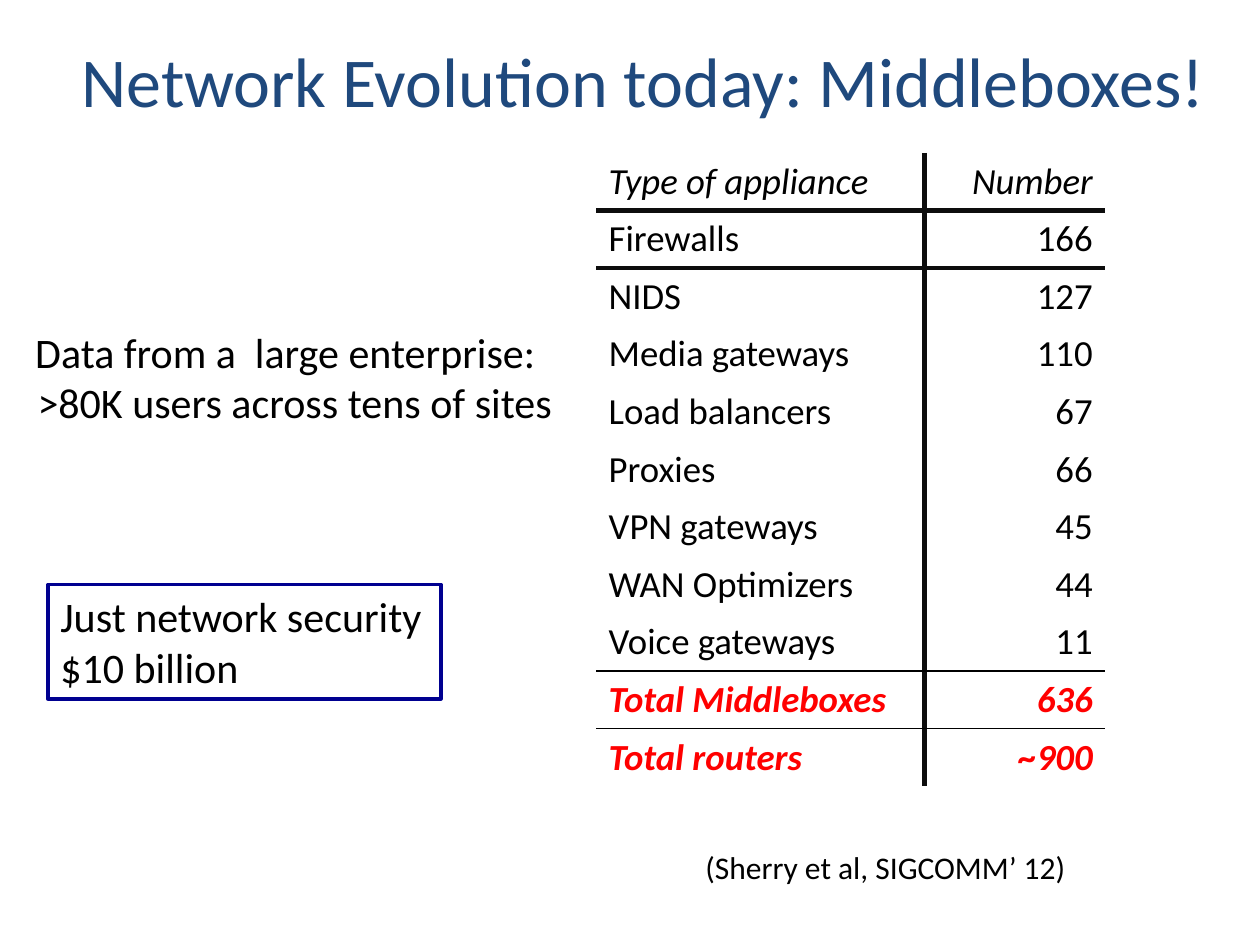
from dataclasses import dataclass

from lxml.etree import SubElement
from pptx import Presentation
from pptx.dml.color import RGBColor
from pptx.enum.shapes import MSO_SHAPE as Preset
from pptx.enum.text import MSO_ANCHOR as Anchor, MSO_AUTO_SIZE as AutoSize, PP_ALIGN as Align
from pptx.oxml import parse_xml
from pptx.oxml.ns import nsdecls, qn
from pptx.util import Pt


@dataclass(frozen=True)
class Theme:
    """Colours, font and type sizes of the slide."""
    font: str = "Calibri"
    title: str = "1F497D"
    text: str = "000000"
    total: str = "FF0000"
    rule: str = "0D0D0D"
    frame: str = "000090"
    paper: str = "FFFFFF"
    title_size: int = 40
    body_size: int = 24
    table_size: int = 21
    source_size: int = 18
    thick: int = 3
    thin: int = 1


THEME = Theme()
NO_STYLE = "{2D5ABB26-0587-4C30-8999-92F81FD0307C}"
APPLIANCES = [
    ("Type of appliance", "Number"),
    ("Firewalls", "166"),
    ("NIDS", "127"),
    ("Media gateways", "110"),
    ("Load balancers", "67"),
    ("Proxies", "66"),
    ("VPN gateways", "45"),
    ("WAN Optimizers", "44"),
    ("Voice gateways", "11"),
    ("Total Middleboxes", "636"),
    ("Total routers", "~900"),
]
RULES_BELOW = {
    0: (THEME.rule, THEME.thick),
    1: (THEME.rule, THEME.thick),
    8: (THEME.text, THEME.thin),
    9: (THEME.text, THEME.thin),
}


def points(*lengths):
    """Turn numbers into point lengths."""
    return [Pt(length) for length in lengths]


def write_lines(frame, lines, size, color=THEME.text, align=Align.LEFT, **font_format):
    """Write each line as one formatted paragraph."""
    for index, line in enumerate(lines):
        paragraph = frame.paragraphs[0] if index == 0 else frame.add_paragraph()
        paragraph.alignment = align
        run = paragraph.add_run()
        run.text = line
        run.font.color.rgb = RGBColor.from_string(color)
        for name, value in {"name": THEME.font, "size": Pt(size), **font_format}.items():
            setattr(run.font, name, value)


def set_title(slide, text, box):
    """Place and format the title placeholder."""
    title = slide.shapes.title
    for name, value in zip(("left", "top", "width", "height"), points(*box)):
        setattr(title, name, value)
    title.text_frame.auto_size = AutoSize.NONE
    title.text_frame.vertical_anchor = Anchor.MIDDLE
    write_lines(title.text_frame, [text], THEME.title_size, THEME.title, Align.CENTER)


def add_text(slide, lines, box, size, align=Align.LEFT, wrap=True):
    """Add a text box and return its text frame."""
    frame = slide.shapes.add_textbox(*points(*box)).text_frame
    frame.word_wrap = wrap
    frame.auto_size = AutoSize.SHAPE_TO_FIT_TEXT
    write_lines(frame, lines, size, align=align)
    return frame


def add_framed_text(slide, lines, box):
    """Add a white rectangle with a coloured frame and text."""
    shape = slide.shapes.add_shape(Preset.RECTANGLE, *points(*box))
    shape.shadow.inherit = False
    shape.fill.solid()
    shape.fill.fore_color.rgb = RGBColor.from_string(THEME.paper)
    shape.line.color.rgb = RGBColor.from_string(THEME.frame)
    shape.line.width = Pt(2)
    shape.text_frame.vertical_anchor = Anchor.TOP
    shape.text_frame.auto_size = AutoSize.SHAPE_TO_FIT_TEXT
    write_lines(shape.text_frame, lines, THEME.body_size)


def set_borders(cell, borders):
    """Draw the given cell sides and clear the others."""
    properties = cell._tc.get_or_add_tcPr()
    for index, side in enumerate("LRTB"):
        line = parse_xml(f"<a:ln{side} {nsdecls('a')}/>")
        if borders.get(side):
            color, width = borders[side]
            line.set("w", str(Pt(width)))
            fill = SubElement(line, qn("a:solidFill"))
            SubElement(fill, qn("a:srgbClr")).set("val", color)
        else:
            SubElement(line, qn("a:noFill"))
        properties.insert(index, line)


def add_appliance_table(slide, left, top, widths, row_height):
    """Add the table of appliances with its rules."""
    height = row_height * len(APPLIANCES)
    box = points(left, top, sum(widths), height)
    table = slide.shapes.add_table(len(APPLIANCES), len(widths), *box).table
    table.first_row = table.horz_banding = False
    table._tbl.tblPr.find(qn("a:tableStyleId")).text = NO_STYLE
    for column, width in zip(table.columns, widths):
        column.width = Pt(width)
    for row_index, values in enumerate(APPLIANCES):
        table.rows[row_index].height = Pt(row_height)
        is_total = values[0].startswith("Total")
        color = THEME.total if is_total else THEME.text
        for column_index, value in enumerate(values):
            cell = table.cell(row_index, column_index)
            cell.fill.background()
            cell.vertical_anchor = Anchor.MIDDLE
            align = Align.RIGHT if column_index else Align.LEFT
            write_lines(cell.text_frame, [value], THEME.table_size, color, align,
                        bold=is_total, italic=is_total or row_index == 0)
            set_borders(cell, {
                "L" if column_index else "R": (THEME.rule, THEME.thick),
                "T": RULES_BELOW.get(row_index - 1),
                "B": RULES_BELOW.get(row_index),
            })


def main():
    """Build and save the slide."""
    presentation = Presentation()
    presentation.slide_width, presentation.slide_height = points(720, 540)
    slide = presentation.slides.add_slide(presentation.slide_layouts[5])
    add_appliance_table(slide, 340.6, 87.3, (187.8, 103.2), 32.9)
    set_title(slide, "Network Evolution today: Middleboxes!", (36, 9.4, 663, 72))
    data_lines = ["Data from a  large enterprise:", ">80K users across tens of sites"]
    data_frame = add_text(slide, data_lines, (0, 183, 326, 65.4), THEME.body_size, Align.CENTER)
    data_frame.paragraphs[1]._p.get_or_add_pPr().set("marL", str(Pt(10.8)))
    add_framed_text(slide, ["Just network security", "$10 billion"], (27.4, 334, 224.6, 65.4))
    add_text(slide, ["(Sherry et al, SIGCOMM’ 12)"], (396, 481, 222.5, 29),
             THEME.source_size, wrap=False)
    presentation.save("out.pptx")


if __name__ == "__main__":
    main()
